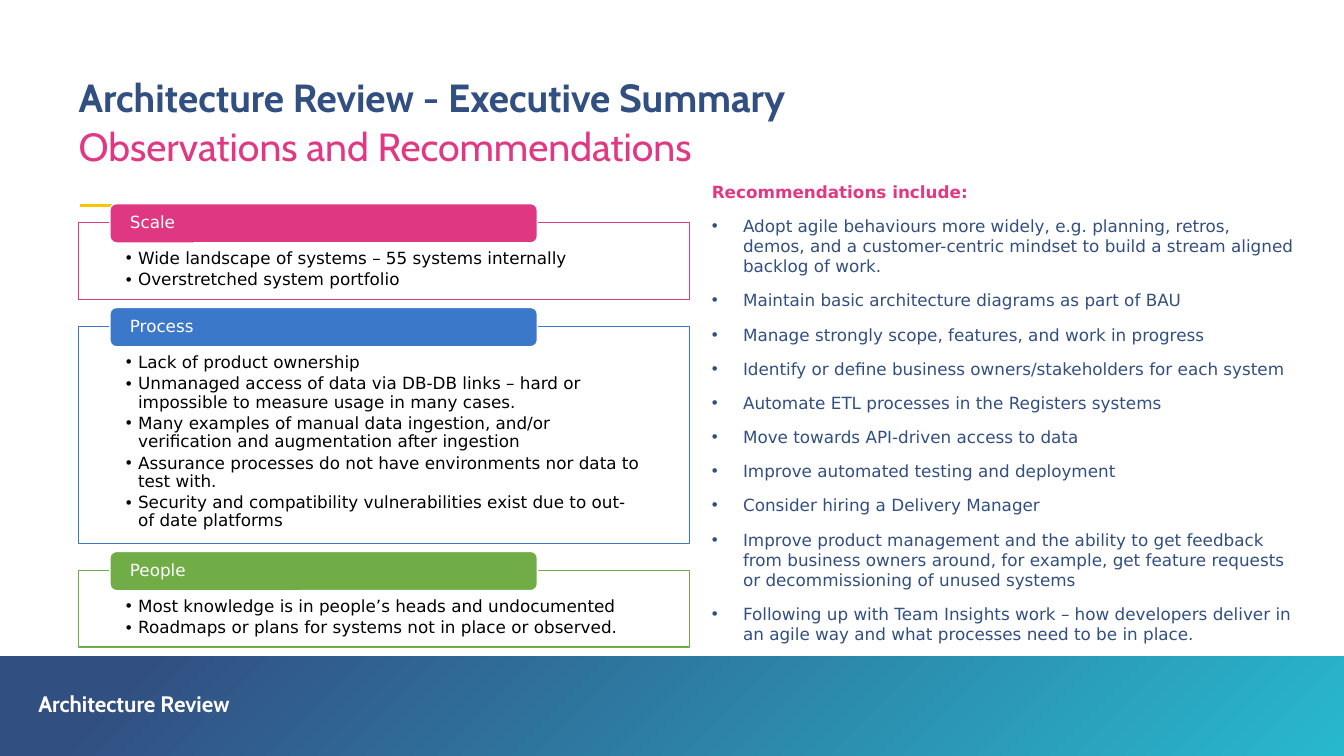
"""Builds the executive summary slide of an architecture review."""
from dataclasses import dataclass

from lxml.etree import SubElement
from pptx import Presentation
from pptx.dml.color import RGBColor
from pptx.enum.shapes import MSO_CONNECTOR as Connector, MSO_SHAPE as Shape
from pptx.enum.text import MSO_ANCHOR as Anchor, MSO_AUTO_SIZE as AutoSize, PP_ALIGN as Align
from pptx.oxml.ns import qn
from pptx.util import Inches, Pt


@dataclass(frozen=True)
class Theme:
    heading_font: str = "Cabin"
    body_font: str = "DejaVu Sans"
    title_size: int = 28
    footer_size: int = 16
    body_size: int = 12
    navy: str = "324F82"
    pink: str = "E03882"
    teal: str = "28B8CE"
    yellow: str = "F9C402"
    white: str = "FFFFFF"
    black: str = "000000"
    scale: str = "DF3782"
    process: str = "3B78CA"
    people: str = "70AD47"


THEME = Theme()

SECTIONS = [
    ("Scale", THEME.scale, 0.76, [
        "Wide landscape of systems – 55 systems internally",
        "Overstretched system portfolio",
    ]),
    ("Process", THEME.process, 2.15, [
        "Lack of product ownership",
        "Unmanaged access of data via DB-DB links – hard or impossible to measure usage in many cases.",
        "Many examples of manual data ingestion, and/or verification and augmentation after ingestion",
        "Assurance processes do not have environments nor data to test with.",
        "Security and compatibility vulnerabilities exist due to out-of date platforms",
    ]),
    ("People", THEME.people, 0.76, [
        "Most knowledge is in people’s heads and undocumented",
        "Roadmaps or plans for systems not in place or observed.",
    ]),
]

RECOMMENDATIONS = [
    "Adopt agile behaviours more widely, e.g. planning, retros, demos, and a customer-centric "
    "mindset to build a stream aligned backlog of work.",
    "Maintain basic architecture diagrams as part of BAU",
    "Manage strongly scope, features, and work in progress",
    "Identify or define business owners/stakeholders for each system",
    "Automate ETL processes in the Registers systems",
    "Move towards API-driven access to data",
    "Improve automated testing and deployment",
    "Consider hiring a Delivery Manager",
    "Improve product management and the ability to get feedback from business owners around, "
    "for example, get feature requests or decommissioning of unused systems",
    "Following up with Team Insights work – how developers deliver in an agile way and what "
    "processes need to be in place.",
]


def write(frame, text, *, size, font, color, bold=False, indent=0, spacing=1.0, before=0, after=0):
    first = not frame.text
    para = frame.paragraphs[0] if first else frame.add_paragraph()
    properties = para._p.get_or_add_pPr()
    properties.set("marL", str(Inches(indent)))
    properties.set("indent", str(-Inches(indent)))
    if indent:
        SubElement(properties, qn("a:buFont"), typeface="Arial")
        SubElement(properties, qn("a:buChar"), char="•")
    else:
        SubElement(properties, qn("a:buNone"))
    para.alignment = Align.LEFT
    para.line_spacing = spacing
    para.space_before = Pt(0 if first else before)
    para.space_after = Pt(after)
    span = para.add_run()
    span.text = text
    span.font.size = Pt(size)
    span.font.name = font
    span.font.bold = bold
    span.font.color.rgb = RGBColor.from_string(color)


class SlideBuilder:
    def __init__(self, slide, theme):
        self.slide = slide
        self.theme = theme

    def frame(self, box, margins=(0, 0, 0, 0), anchor=Anchor.TOP):
        frame = box.text_frame
        frame.word_wrap = True
        frame.auto_size = AutoSize.NONE
        frame.vertical_anchor = anchor
        (frame.margin_left, frame.margin_top,
         frame.margin_right, frame.margin_bottom) = map(Inches, margins)
        return frame

    def placeholder(self, box, left, top, width, height):
        box.left, box.top, box.width, box.height = map(Inches, (left, top, width, height))
        return self.frame(box)

    def text_box(self, left, top, width, height):
        return self.frame(self.slide.shapes.add_textbox(*map(Inches, (left, top, width, height))))

    def heading(self, frame, text, color, size, bold=True):
        write(frame, text, size=size, font=self.theme.heading_font, color=color,
              bold=bold, spacing=0.9)

    def body(self, frame, text, color, **style):
        write(frame, text, size=self.theme.body_size, font=self.theme.body_font,
              color=color, **style)

    def shape(self, kind, left, top, width, height, fill=None, line=None, opacity=100):
        box = self.slide.shapes.add_shape(kind, *map(Inches, (left, top, width, height)))
        box.shadow.inherit = False
        if fill:
            box.fill.solid()
            box.fill.fore_color.rgb = RGBColor.from_string(fill)
            if opacity < 100:
                color = box._element.spPr.find(qn("a:solidFill"))[0]
                SubElement(color, qn("a:alpha"), val=str(opacity * 1000))
        if line:
            box.line.color.rgb = RGBColor.from_string(line)
            box.line.width = Pt(1)
        else:
            box.line.fill.background()
        return box

    def band(self, left, top, width, height):
        box = self.shape(Shape.RECTANGLE, left, top, width, height)
        box.fill.gradient()
        box.fill.gradient_angle = 315
        stops = [(0.1, self.theme.navy), (1, self.theme.teal)]
        for stop, (position, color) in zip(box.fill.gradient_stops, stops):
            stop.position = position
            stop.color.rgb = RGBColor.from_string(color)

    def rule(self, left, right, y):
        line = self.slide.shapes.add_connector(
            Connector.STRAIGHT, Inches(left), Inches(y), Inches(right), Inches(y))
        line.line.color.rgb = RGBColor.from_string(self.theme.yellow)
        line.line.width = Pt(2.25)
        SubElement(line._element.spPr, qn("a:effectLst"))

    def section(self, top, height, label, color, items):
        panel = self.shape(Shape.RECTANGLE, 0.78, top, 6.06, height,
                           self.theme.white, color, opacity=90)
        frame = self.frame(panel, (0.47, 0.27, 0.47, 0.09))
        for item in items:
            self.body(frame, item, self.theme.black, indent=0.12, spacing=0.9, after=2.4)
        tab = self.shape(Shape.ROUNDED_RECTANGLE, 1.09, top - 0.19, 4.24, 0.39,
                         color, self.theme.white)
        self.body(self.frame(tab, (0.18, 0, 0.18, 0), Anchor.MIDDLE), label,
                  self.theme.white, spacing=0.9)


def main():
    deck = Presentation()
    deck.slide_width, deck.slide_height = Inches(13.33), Inches(7.5)
    page = deck.slides.add_slide(deck.slide_layouts[1])
    builder = SlideBuilder(page, THEME)

    builder.band(0, 6.51, 13.33, 0.99)
    builder.rule(0.79, 1.73, 2.04)
    builder.heading(builder.text_box(0.38, 6.88, 3.93, 0.24), "Architecture Review",
                    THEME.white, THEME.footer_size)

    title = builder.placeholder(page.shapes.title, 0.78, 0.78, 11.77, 0.43)
    builder.heading(title, "Architecture Review - Executive Summary", THEME.navy, THEME.title_size)
    builder.heading(builder.text_box(0.78, 1.27, 11.77, 0.43), "Observations and Recommendations",
                    THEME.pink, THEME.title_size, bold=False)

    advice = builder.placeholder(page.placeholders[1], 7.06, 1.8, 5.78, 4.98)
    builder.body(advice, "Recommendations include:", THEME.pink, bold=True)
    for recommendation in RECOMMENDATIONS:
        builder.body(advice, recommendation, THEME.navy, indent=0.31, before=10)

    top = 2.21
    for label, color, height, items in SECTIONS:
        builder.section(top, height, label, color, items)
        top += height + 0.27

    deck.save("out.pptx")


if __name__ == "__main__":
    main()
